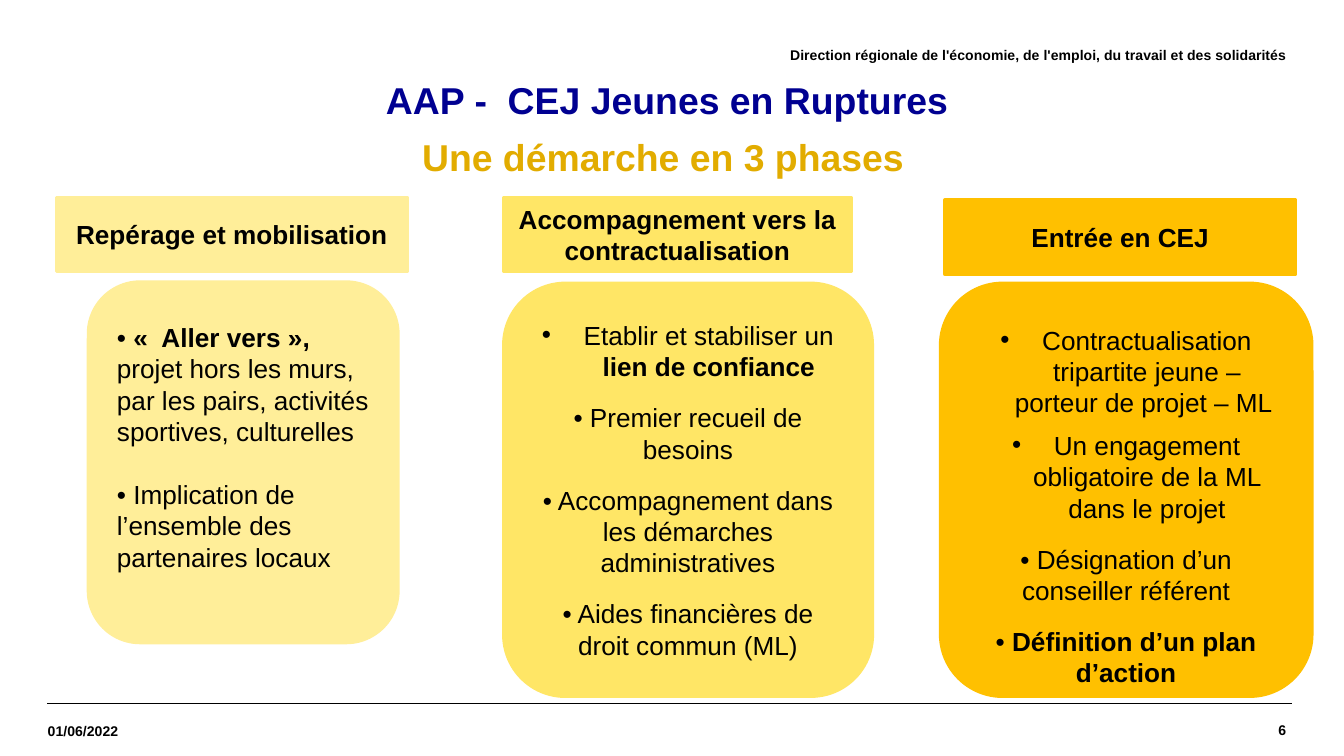
import pptx
import pptx.dml.color
import pptx.enum.shapes
import pptx.enum.text
import pptx.oxml.ns
import pptx.util
from lxml import etree

RGBColor = pptx.dml.color.RGBColor
Align = pptx.enum.text.PP_ALIGN
Anchor = pptx.enum.text.MSO_ANCHOR
ShapeKind = pptx.enum.shapes.MSO_SHAPE
Pt = pptx.util.Pt
qn = pptx.oxml.ns.qn

BLACK = RGBColor(0x00, 0x00, 0x00)
NAVY = RGBColor(0x00, 0x00, 0x91)
GOLD = RGBColor(0xE2, 0xAC, 0x00)
PALE_YELLOW = RGBColor(0xFF, 0xEE, 0x99)
YELLOW = RGBColor(0xFF, 0xE6, 0x66)
AMBER = RGBColor(0xFF, 0xC0, 0x00)

FONT = "Arial"
SLIDE_WIDTH = pptx.util.Inches(10)
SLIDE_HEIGHT = SLIDE_WIDTH * 9 // 16
GRID = SLIDE_WIDTH // 100
HANGING = 3.1
GAP = 10.5

PHASES = [
    {
        "color": PALE_YELLOW,
        "header": ("Repérage et mobilisation", (4.2, 14.7, 26.1, 5.5)),
        "card": (6.6, 21, 23, 26.8),
        "align": Align.LEFT,
        "margins": (0.5, 2.8),
        "items": [
            ([("• ", False), ("«  Aller vers », ", True),
              ("projet hors les murs, par les pairs, activités sportives, culturelles", False)], False, 0),
            ([("• Implication de l’ensemble des partenaires locaux", False)], False, 16.8),
        ],
    },
    {
        "color": YELLOW,
        "header": ("Accompagnement vers la contractualisation", (37.5, 14.7, 25.8, 5.5)),
        "card": (37.5, 21.1, 27.4, 30.7),
        "align": Align.CENTER,
        "margins": (0.5, 0.5),
        "items": [
            ([("Etablir et stabiliser un ", False), ("lien de confiance", True)], True, 0),
            ([("• Premier recueil de besoins", False)], False, GAP),
            ([("• Accompagnement dans les démarches administratives", False)], False, GAP),
            ([("• Aides financières de droit commun (ML)", False)], False, GAP),
        ],
    },
    {
        "color": AMBER,
        "header": ("Entrée en CEJ", (70.3, 14.9, 26.1, 5.5)),
        "card": (70, 21.1, 27.6, 30.7),
        "align": Align.CENTER,
        "margins": (2.4, 0),
        "items": [
            ([("Contractualisation tripartite jeune – porteur de projet – ML ", False)], True, 0),
            ([("Un engagement obligatoire de la ML dans le projet", False)], True, 6),
            ([("• Désignation d’un conseiller référent", False)], False, GAP),
            ([("• ", False), ("Définition d’un plan d’action", True)], False, GAP),
        ],
    },
]


def units(count):
    return int(count * GRID)


def place(box):
    return [units(length) for length in box]


def style(paragraph, size, color, bold=None, align=Align.LEFT):
    paragraph.alignment = align
    paragraph.font.name = FONT
    paragraph.font.size = Pt(size)
    paragraph.font.color.rgb = color
    paragraph.font.bold = bold


def set_bullet(paragraph, character=None):
    properties = paragraph._p.get_or_add_pPr()
    indent = units(HANGING) if character else 0
    properties.set("marL", str(indent))
    properties.set("indent", str(-indent))
    if character:
        etree.SubElement(properties, qn("a:buFont"), typeface=FONT)
        etree.SubElement(properties, qn("a:buChar"), char=character)
    else:
        etree.SubElement(properties, qn("a:buNone"))


def set_margins(frame, left, top, right, bottom):
    frame.margin_left, frame.margin_top = units(left), units(top)
    frame.margin_right, frame.margin_bottom = units(right), units(bottom)


def fill_placeholder(shape, text, box, color, anchor, left_margin, line_spacing):
    shape.left, shape.top, shape.width, shape.height = place(box)
    frame = shape.text_frame
    frame.text = text
    frame.word_wrap = True
    frame.auto_size = pptx.enum.text.MSO_AUTO_SIZE.NONE
    frame.vertical_anchor = anchor
    set_margins(frame, left_margin, 0, 0, 0)
    paragraph = frame.paragraphs[0]
    paragraph.line_spacing = line_spacing
    paragraph.space_before = Pt(0)
    set_bullet(paragraph)
    style(paragraph, 20, color, True, Align.CENTER)


def add_label(slide, text, box, align):
    frame = slide.shapes.add_textbox(*place(box)).text_frame
    frame.text = text
    frame.word_wrap = True
    frame.vertical_anchor = Anchor.MIDDLE
    set_margins(frame, 0, 0, 0, 0)
    style(frame.paragraphs[0], 7.5, BLACK, True, align)


def add_rule(slide, left, right, top):
    line = slide.shapes.add_connector(
        pptx.enum.shapes.MSO_CONNECTOR.STRAIGHT, *place((left, top, right, top)))
    line.line.color.rgb = BLACK
    line.line.width = Pt(0.8)
    etree.SubElement(line._element.spPr, qn("a:effectLst"))


def add_block(slide, kind, box, color):
    shape = slide.shapes.add_shape(kind, *place(box))
    shape.shadow.inherit = False
    shape.fill.solid()
    shape.fill.fore_color.rgb = color
    shape.line.color.rgb = color
    shape.line.width = Pt(2)
    frame = shape.text_frame
    frame.word_wrap = True
    frame.vertical_anchor = Anchor.MIDDLE
    return frame


def add_header(slide, text, box, color):
    frame = add_block(slide, ShapeKind.RECTANGLE, box, color)
    frame.text = text
    style(frame.paragraphs[0], 14, BLACK, True, Align.CENTER)


def add_card(slide, phase):
    frame = add_block(slide, ShapeKind.ROUNDED_RECTANGLE, phase["card"], phase["color"])
    top, bottom = phase["margins"]
    set_margins(frame, 1, top, 1, bottom)
    for index, (runs, bulleted, space) in enumerate(phase["items"]):
        paragraph = frame.add_paragraph() if index else frame.paragraphs[0]
        paragraph.space_before = Pt(space)
        if bulleted:
            set_bullet(paragraph, "•")
        style(paragraph, 14, BLACK, align=phase["align"])
        for text, bold in runs:
            run = paragraph.add_run()
            run.text = text
            run.font.bold = bold


def main():
    presentation = pptx.Presentation()
    presentation.slide_width = SLIDE_WIDTH
    presentation.slide_height = SLIDE_HEIGHT
    slide = presentation.slides.add_slide(presentation.slide_layouts[1])

    for left, right in ((3.5, 95.7), (3.9, 96.1)):
        add_rule(slide, left, right, 52.33)
    add_label(slide, "6", (80.9, 52.35, 14.8, 3.9), Align.RIGHT)
    add_label(slide, "01/06/2022", (3.55, 52.5, 12.8, 3.8), Align.LEFT)
    add_label(slide, "Direction régionale de l'économie, de l'emploi, du travail et des solidarités",
              (31.4, 2.1, 64.3, 3.9), Align.RIGHT)

    fill_placeholder(slide.shapes.title, "AAP -  CEJ Jeunes en Ruptures",
                     (3.5, 5.3, 92.1, 4.7), NAVY, Anchor.MIDDLE, 0.2, 0.9)
    fill_placeholder(slide.placeholders[1], "Une démarche en 3 phases",
                     (2.8, 10, 92.1, 2.7), GOLD, Anchor.TOP, 1, 1.0)

    for phase in PHASES:
        add_header(slide, *phase["header"], phase["color"])
        add_card(slide, phase)
    presentation.save("out.pptx")


if __name__ == "__main__":
    main()
